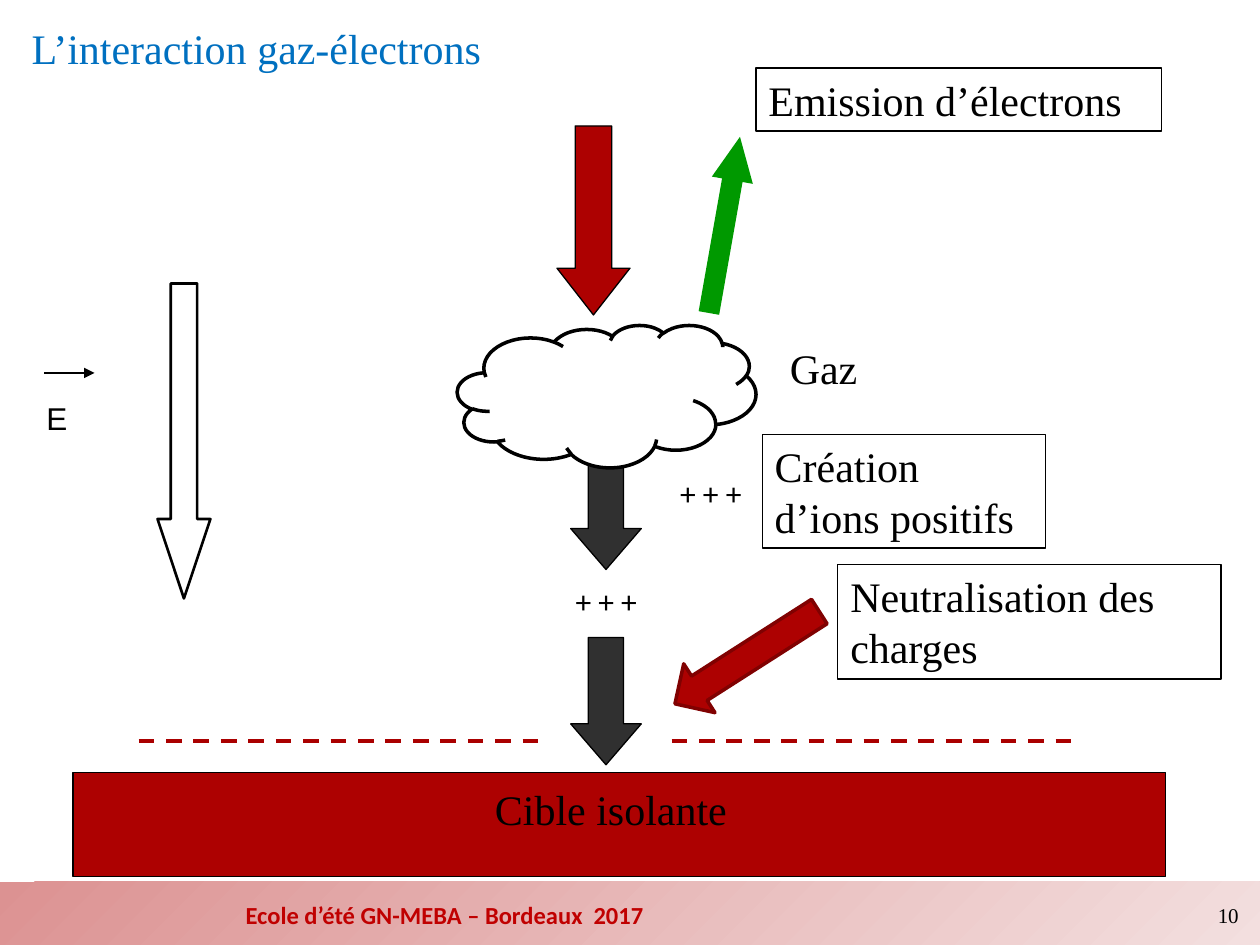
"""Build the slide on gas-electron interaction above an insulating target."""
from lxml import etree
from pptx import Presentation
from pptx import util as u
from pptx.dml.color import RGBColor
from pptx.enum import dml, shapes, text
from pptx.oxml import ns

COLUMNS, ROWS = 100, 75
WIDTH, HEIGHT = u.Inches(10), u.Inches(7.5)
COLORS = {
    "black": "000000", "white": "FFFFFF", "title": "0070C0", "footer": "C00000",
    "red": "AD0101", "dark red": "800101", "charge": "AA0000", "green": "009900",
    "grey": "303030", "band dark": "DC9292", "band light": "F3DFDF",
}
SERIF = "Times New Roman"
KIND = shapes.MSO_SHAPE


def color(name):
    return RGBColor.from_string(COLORS[name])


def x(columns):
    return int(WIDTH * columns / COLUMNS)


def y(rows):
    return int(HEIGHT * rows / ROWS)


def grid(left, top, width, height):
    return x(left), y(top), x(width), y(height)


def write(shape, words, size=24, font=SERIF, ink="black", align=text.PP_ALIGN.LEFT,
          anchor=text.MSO_ANCHOR.TOP, wrap=True, bold=False):
    frame = shape.text_frame
    frame.word_wrap = wrap
    frame.vertical_anchor = anchor
    paragraph = frame.paragraphs[0]
    paragraph.text = words
    paragraph.alignment = align
    paragraph.font.size = u.Pt(size)
    paragraph.font.name = font
    paragraph.font.bold = bold
    paragraph.font.color.rgb = color(ink)


def add_title(slide, words, place):
    title = slide.shapes.title
    title.left, title.top, title.width, title.height = grid(*place)
    title.text_frame.auto_size = text.MSO_AUTO_SIZE.NONE
    write(title, words, ink="title")


def add_label(slide, words, place, **style):
    write(slide.shapes.add_textbox(*grid(*place)), words, **style)


def add_figure(slide, kind, place, fill=None, line="black", weight=0.75,
               adjust=(), rotation=0):
    shape = slide.shapes.add_shape(kind, *grid(*place))
    shape.shadow.inherit = False
    shape.rotation = rotation
    for index, value in enumerate(adjust):
        shape.adjustments[index] = value
    if fill:
        shape.fill.solid()
        shape.fill.fore_color.rgb = color(fill)
    else:
        shape.fill.background()
    if line:
        shape.line.color.rgb = color(line)
        shape.line.width = u.Pt(weight)
    else:
        shape.line.fill.background()
    return shape


def add_line(slide, left, right, row, ink="black", weight=0.75, dashed=False, arrow=False):
    line = slide.shapes.add_connector(
        shapes.MSO_CONNECTOR.STRAIGHT, x(left), y(row), x(right), y(row))
    line.line.color.rgb = color(ink)
    line.line.width = u.Pt(weight)
    if dashed:
        line.line.dash_style = dml.MSO_LINE.DASH
    if arrow:
        etree.SubElement(line.line._get_or_add_ln(), ns.qn("a:tailEnd"), type="triangle")
    etree.SubElement(line._element.spPr, ns.qn("a:effectLst"))


def add_footer(slide):
    band = add_figure(slide, KIND.RECTANGLE, (0, 70, 100, 5), line=None)
    band.fill.gradient()
    band.fill.gradient_angle = 315
    for stop, name in zip(band.fill.gradient_stops, ("band dark", "band light")):
        stop.color.rgb = color(name)
    add_label(slide, "Ecole d’été GN-MEBA – Bordeaux  2017", (18.5, 70.9, 33.8, 3.4),
              size=14, font="Calibri", ink="footer", wrap=False, bold=True)
    add_label(slide, "10", (76, 70.6, 23.3, 4), size=12,
              align=text.PP_ALIGN.RIGHT, anchor=text.MSO_ANCHOR.MIDDLE)


def add_target(slide):
    add_figure(slide, KIND.RECTANGLE, (5.8, 61.3, 86.7, 8.3), fill="red")
    add_label(slide, "Cible isolante", (38.3, 61.7, 23.3, 5))
    for left in (11, 53.3):
        add_line(slide, left, left + 32.3, 58.8, ink="charge", weight=2.25, dashed=True)


def add_field(slide):
    add_figure(slide, KIND.DOWN_ARROW, (12.5, 22.5, 4.2, 25), weight=1.5, adjust=(0.5, 1.5))
    symbol = add_figure(slide, KIND.RECTANGLE, (2.7, 31.2, 8.3, 4), fill="white", line=None)
    write(symbol, "E", size=18, font="Arial")
    add_line(slide, 3.5, 7.5, 29.6, arrow=True)


def add_beam(slide):
    add_figure(slide, KIND.DOWN_ARROW, (44.2, 10, 5.8, 15), fill="red", adjust=(0.5, 0.64))
    add_figure(slide, KIND.RIGHT_ARROW, (50.4, 16.2, 14.2, 3.3), fill="green", line=None,
               adjust=(0.5, 1.06), rotation=280)
    for top in (35.1, 50.6):
        add_figure(slide, KIND.DOWN_ARROW, (45.3, top, 5.6, 10.1), fill="grey",
                   adjust=(0.5, 0.58))
    add_figure(slide, KIND.CLOUD, (36.3, 25.8, 23.7, 11.3), fill="white", weight=2)
    add_label(slide, "Gaz", (61.7, 26.7, 15, 5))
    for left, top in ((44.7, 45.7), (53, 37.1)):
        add_label(slide, "+ + +", (left, top, 8.2, 4), size=18, font="Calibri")
    add_figure(slide, KIND.LEFT_ARROW, (52.5, 49.9, 13.6, 4.6), fill="red",
               line="dark red", weight=2, rotation=327.4)


def add_captions(slide):
    captions = (
        ("Emission d’électrons", (60, 5.4, 32.2, 5)),
        ("Création d’ions positifs", (60.5, 34.5, 22.5, 9)),
        ("Neutralisation des charges", (66.5, 44.8, 30.4, 9.1)),
    )
    for words, place in captions:
        write(add_figure(slide, KIND.RECTANGLE, place), words)


def main():
    presentation = Presentation()
    presentation.slide_width, presentation.slide_height = WIDTH, HEIGHT
    slide = presentation.slides.add_slide(presentation.slide_layouts[5])
    add_title(slide, "L’interaction gaz-électrons", (1.5, 1.3, 38.1, 9.1))
    add_footer(slide)
    add_target(slide)
    add_field(slide)
    add_beam(slide)
    add_captions(slide)
    presentation.save("out.pptx")


if __name__ == "__main__":
    main()
